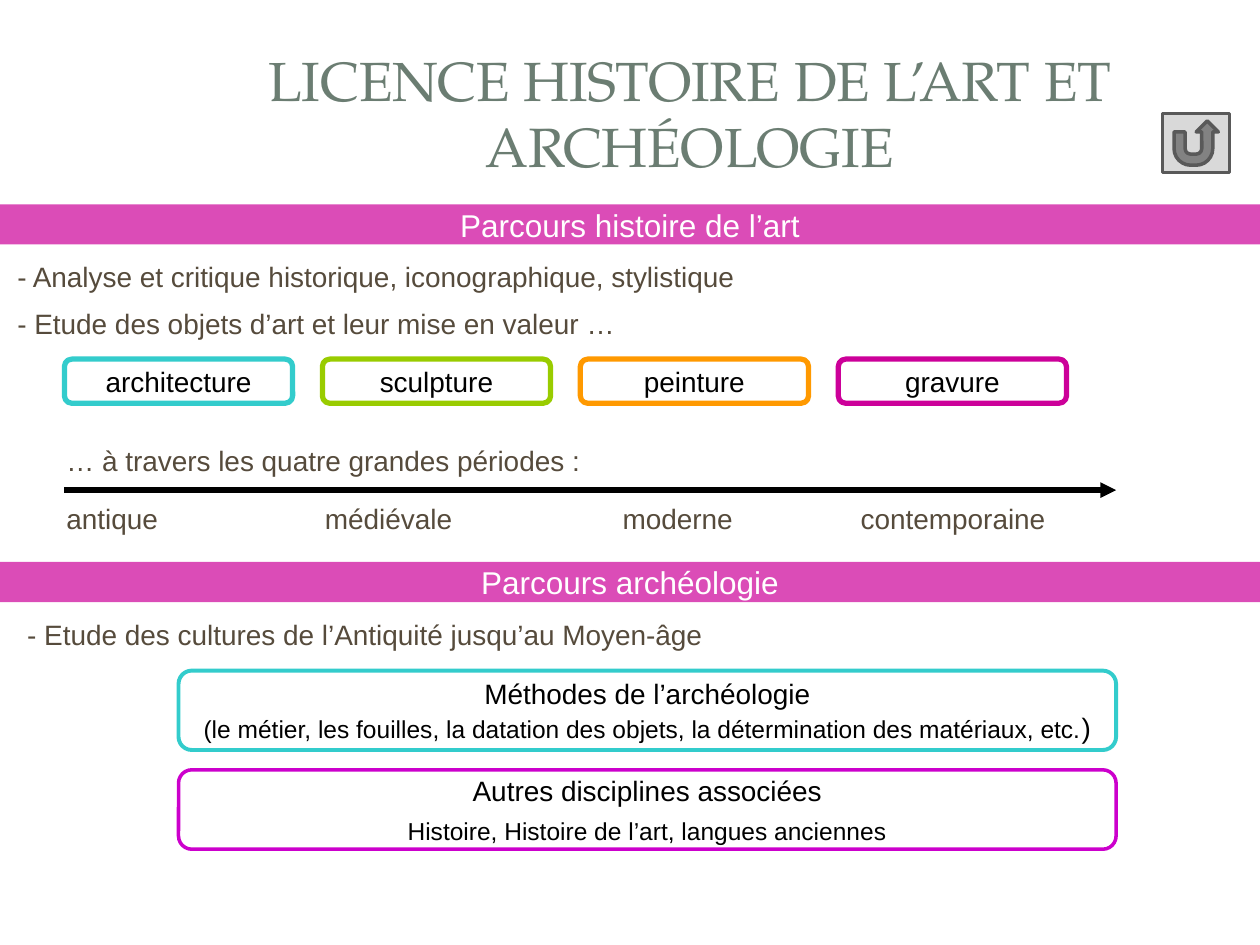
from lxml import etree
from pptx import Presentation
from pptx.dml.color import RGBColor
from pptx.enum.shapes import MSO_CONNECTOR, MSO_SHAPE
from pptx.enum.text import MSO_ANCHOR, MSO_AUTO_SIZE, PP_ALIGN
from pptx.oxml.ns import qn
from pptx.util import Cm, Pt

RECTANGLE = MSO_SHAPE.RECTANGLE
ROUNDED = MSO_SHAPE.ROUNDED_RECTANGLE
RETURN_BUTTON = MSO_SHAPE.ACTION_BUTTON_RETURN
STRAIGHT = MSO_CONNECTOR.STRAIGHT
MIDDLE, TOP = MSO_ANCHOR.MIDDLE, MSO_ANCHOR.TOP
CENTER, LEFT = PP_ALIGN.CENTER, PP_ALIGN.LEFT
GROW = MSO_AUTO_SIZE.SHAPE_TO_FIT_TEXT

BODY_FONT, TITLE_FONT = "Arial", "TeX Gyre Pagella"
BROWN, BLACK, WHITE, SAGE = "564B3C", "000000", "FFFFFF", "6B7D72"
MAGENTA, TURQUOISE, PURPLE = "CC0099", "33CCCC", "CC00CC"


def color(hex_string):
    return RGBColor.from_string(hex_string)


def set_format(target, values):
    for name, value in values.items():
        setattr(target, name, value)


def write_text(shape, paragraphs, font_color, font=BODY_FONT, align=CENTER,
               anchor=MIDDLE, wrap=False, space_before=0):
    """Fill a shape with paragraphs, each a list of (text, size) runs."""
    frame = shape.text_frame
    set_format(frame, {"word_wrap": wrap, "vertical_anchor": anchor})
    for index, runs in enumerate(paragraphs):
        paragraph = frame.add_paragraph() if index else frame.paragraphs[0]
        set_format(paragraph, {"alignment": align, "space_before": Pt(space_before)})
        for text, size in runs:
            run = paragraph.add_run()
            run.text = text
            set_format(run.font, {"name": font, "size": Pt(size)})
            run.font.color.rgb = color(font_color)


def add_box(slide, kind, left, top, width, height, fill=None, line=None, line_width=0):
    shape = slide.shapes.add_shape(kind, Cm(left), Cm(top), Cm(width), Cm(height))
    shape.shadow.inherit = False
    if fill:
        shape.fill.solid()
        shape.fill.fore_color.rgb = color(fill)
    else:
        shape.fill.background()
    if line:
        shape.line.color.rgb = color(line)
        shape.line.width = Pt(line_width)
    else:
        shape.line.fill.background()
    return shape


def add_band(slide, top, text):
    """Add a translucent section heading across the slide."""
    band = add_box(slide, RECTANGLE, 0, top, 25.4, 0.81, fill=MAGENTA)
    fill_color = band.fill._xPr.find(qn("a:solidFill"))[0]
    etree.SubElement(fill_color, qn("a:alpha"), val="70000")
    write_text(band, [[(text, 18)]], WHITE)


def add_label(slide, left, top, width, text, wrap=False):
    label = slide.shapes.add_textbox(Cm(left), Cm(top), Cm(width), Cm(0.94))
    write_text(label, [[(text, 16)]], BROWN, align=LEFT, anchor=TOP, wrap=wrap)
    label.text_frame.auto_size = GROW


def add_title(slide, text):
    title = slide.shapes.add_textbox(Cm(3.71), Cm(0.91), Cm(20.4), Cm(2.72))
    write_text(title, [[(text, 31.5)]], SAGE, font=TITLE_FONT, wrap=True)


def add_timeline(slide, left, right, top):
    arrow = slide.shapes.add_connector(STRAIGHT, Cm(left), Cm(top), Cm(right), Cm(top))
    arrow.line.color.rgb = color(BLACK)
    arrow.line.width = Pt(3)
    etree.SubElement(arrow.line._get_or_add_ln(), qn("a:tailEnd"), type="triangle")
    etree.SubElement(arrow._element.spPr, qn("a:effectLst"))


def main():
    presentation = Presentation()
    set_format(presentation, {"slide_width": Cm(25.4), "slide_height": Cm(19.05)})
    slide = presentation.slides.add_slide(presentation.slide_layouts[6])

    add_title(slide, "LICENCE HISTOIRE DE L’ART ET ARCHÉOLOGIE")
    add_box(slide, RETURN_BUTTON, 23.44, 2.29, 1.35, 1.19,
            fill="D9D9D9", line="595959", line_width=2)

    add_band(slide, 4.12, "Parcours histoire de l’art")
    add_label(slide, 0.1, 5.11, 19.8,
              "- Analyse et critique historique, iconographique, stylistique", wrap=True)
    add_label(slide, 0.1, 6.05, 19.8,
              "- Etude des objets d’art et leur mise en valeur …", wrap=True)

    arts = [("architecture", TURQUOISE), ("sculpture", "99CC00"),
            ("peinture", "FF9900"), ("gravure", MAGENTA)]
    for index, (art, outline) in enumerate(arts):
        box = add_box(slide, ROUNDED, 1.3 + 5.2 * index, 7.24, 4.6, 0.89,
                      line=outline, line_width=3)
        write_text(box, [[(art, 16)]], BLACK)

    add_label(slide, 1.09, 8.82, 11.17, "… à travers les quatre grandes périodes :")
    add_timeline(slide, 1.3, 22.5, 9.88)
    periods = [("antique", 1.09, 2.36), ("médiévale", 6.3, 3.08),
               ("moderne", 12.3, 2.74), ("contemporaine", 17.1, 4.24)]
    for period, left, width in periods:
        add_label(slide, left, 9.99, width, period)

    add_band(slide, 11.33, "Parcours archéologie")
    add_label(slide, 0.3, 12.33, 23.2,
              "- Etude des cultures de l’Antiquité jusqu’au Moyen-âge", wrap=True)

    methods = add_box(slide, ROUNDED, 3.6, 13.52, 18.9, 1.6,
                      line=TURQUOISE, line_width=2.25)
    write_text(methods, [
        [("Méthodes de l’archéologie", 16)],
        [("(le métier, les fouilles, la datation des objets, "
          "la détermination des matériaux, etc.", 14), (")", 16)],
    ], BLACK)
    disciplines = add_box(slide, ROUNDED, 3.6, 15.52, 18.9, 1.6,
                          fill=WHITE, line=PURPLE, line_width=2)
    write_text(disciplines, [
        [("Autres disciplines associées", 16)],
        [("Histoire, Histoire de l’art, langues anciennes", 14)],
    ], BLACK, wrap=True, space_before=5)

    presentation.save("out.pptx")


if __name__ == "__main__":
    main()
